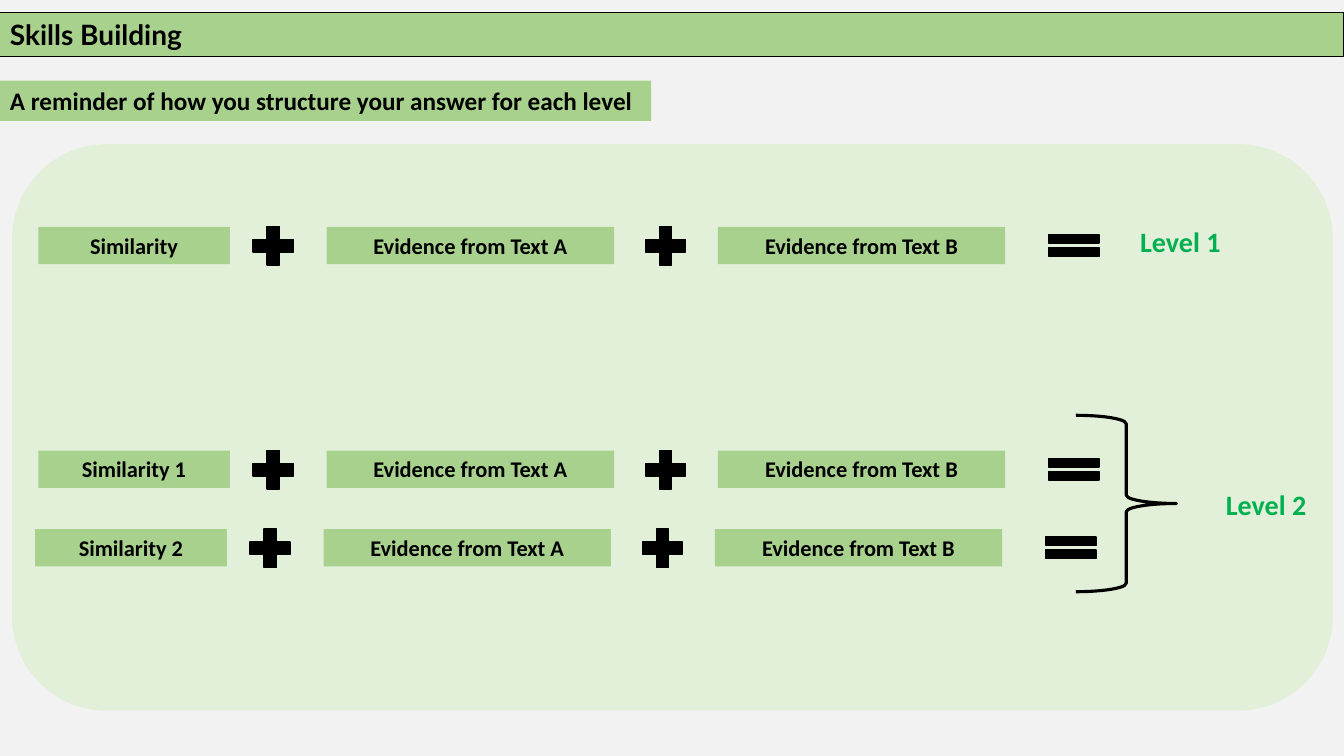
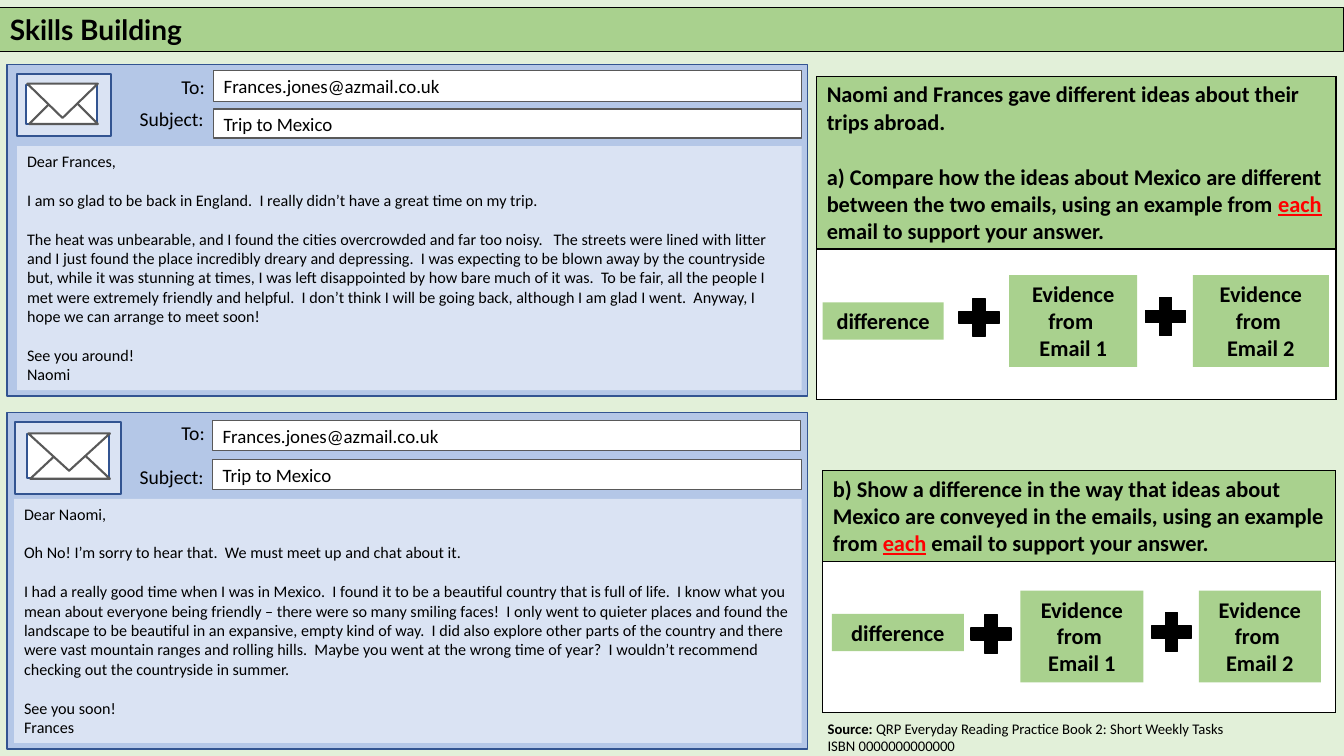
from lxml import etree
from pptx import Presentation
from pptx.dml.color import RGBColor
from pptx.enum.shapes import MSO_SHAPE
from pptx.enum.text import MSO_ANCHOR, PP_ALIGN
from pptx.oxml import parse_xml
from pptx.util import Pt

RECTANGLE = MSO_SHAPE.RECTANGLE
ROUNDED = MSO_SHAPE.ROUNDED_RECTANGLE
TRIANGLE = MSO_SHAPE.ISOSCELES_TRIANGLE
PLUS = MSO_SHAPE.MATH_PLUS
EQUAL = MSO_SHAPE.MATH_EQUAL
BRACE = MSO_SHAPE.RIGHT_BRACE
LEFT, CENTER, RIGHT = PP_ALIGN.LEFT, PP_ALIGN.CENTER, PP_ALIGN.RIGHT
TOP, MIDDLE = MSO_ANCHOR.TOP, MSO_ANCHOR.MIDDLE

PX = 9144  # 100 px to the inch
COLORS = {
    "black": "000000",
    "white": "FFFFFF",
    "gray_page": "F2F2F2",
    "green_page": "E2F0D9",
    "green": "A9D18E",
    "level": "00B050",
    "red": "FF0000",
    "blue": "B4C7E7",
    "blue_light": "DAE3F3",
    "blue_line": "325491",
    "gray_line": "595959",
}
DRAWING = "http://schemas.openxmlformats.org/drawingml/2006/main"


def add_box(shapes, kind, bounds, fill=None, line=None, width=1):
    """Add a preset shape, or a text box when kind is None."""
    bounds = [value * PX for value in bounds]
    if kind is None:
        return shapes.add_textbox(*bounds)
    shape = shapes.add_shape(kind, *bounds)
    shape.shadow.inherit = False
    if fill:
        shape.fill.solid()
        shape.fill.fore_color.rgb = RGBColor.from_string(COLORS[fill])
    else:
        shape.fill.background()
    if line:
        shape.line.color.rgb = RGBColor.from_string(COLORS[line])
        shape.line.width = Pt(width)
    else:
        shape.line.fill.background()
    return shape


def write(frame, paragraphs, size, bold=False, color="black", font="Calibri",
          align=LEFT, anchor=TOP, gap=0):
    """Write paragraphs, each a string or a list of (text, changes) runs."""
    frame.word_wrap = True
    frame.vertical_anchor = anchor
    for index, content in enumerate(paragraphs):
        paragraph = frame.add_paragraph() if index else frame.paragraphs[0]
        paragraph.alignment = align
        # The last two lines of a letter (farewell and name) stay together
        if index and not (len(paragraphs) > 2 and index == len(paragraphs) - 1):
            paragraph.space_before = Pt(gap)
        runs = [(content, {})] if isinstance(content, str) else content
        for text, changes in runs:
            for number, part in enumerate(text.split("\n")):
                if number:
                    paragraph.add_line_break()
                run = paragraph.add_run()
                run.text = part
                run.font.name = font
                run.font.size = Pt(size)
                run.font.bold = changes.get("bold", bold)
                run.font.underline = changes.get("underline", False)
                run.font.color.rgb = RGBColor.from_string(
                    COLORS[changes.get("color", color)])


presentation = Presentation()
presentation.slide_width = 1333 * PX
presentation.slide_height = 750 * PX

# Pages with their title bands
slides = []
for page_color, band_top in (("gray_page", 12), ("green_page", 7)):
    slide = presentation.slides.add_slide(presentation.slide_layouts[6])
    slide.background.fill.solid()
    slide.background.fill.fore_color.rgb = RGBColor.from_string(COLORS[page_color])
    if not slides:
        add_box(slide.shapes, ROUNDED, (12, 143, 1310, 562), "green_page")
    band = add_box(slide.shapes, RECTANGLE, (0, band_top, 1333, 44),
                   "green", "black", 0.75)
    write(band.text_frame, ["Skills Building"], 20, True, font="Lato", anchor=MIDDLE)
    slides.append(slide)
levels_slide, emails_slide = slides

# Slide 1: reminder strip
shapes = levels_slide.shapes
strip = add_box(shapes, RECTANGLE, (0, 80, 646, 40), "green")
write(strip.text_frame,
      ["A reminder of how you structure your answer for each level"], 18, True)

# Slide 1: one formula per row
for left, top, first_part in (
    (38, 225, "Similarity"),
    (38, 447, "Similarity 1"),
    (35, 525, "Similarity 2"),
):
    for offset, width, text in (
        (0, 190, first_part),
        (286, 285, "Evidence from Text A"),
        (674, 285, "Evidence from Text B"),
    ):
        part = add_box(shapes, RECTANGLE, (left + offset, top, width, 37), "green")
        write(part.text_frame, [text], 16, True, align=CENTER)
    for offset in (206, 595):
        add_box(shapes, PLUS, (left + offset, top - 7, 54, 52), "black", "black")
    add_box(shapes, EQUAL, (left + 993, top, 68, 37), "black", "black")

# Slide 1: levels reached
add_box(shapes, BRACE, (1067, 412, 100, 175), None, "black", 2.25)
for left, top, text in ((1121, 218, "Level 1"), (1206, 479, "Level 2")):
    label = add_box(shapes, None, (left, top, 110, 44))
    write(label.text_frame, [text], 20, True, "level")

# Slide 2: question tables
shapes = emails_slide.shapes
EACH = ("each", {"color": "red", "underline": True})
ENDING = (" email to support your answer.", {})
for bounds, heights, question in (
    ((810, 76, 515, 320), (171, 149), [
        "Naomi and Frances gave different ideas about their trips abroad.",
        [("a) Compare how the ideas about Mexico are different between the two "
          "emails, using an example from ", {}), EACH, ENDING],
    ]),
    ((816, 467, 509, 240), (90, 150), [
        [("b) Show a difference in the way that ideas about Mexico are conveyed "
          "in the emails, using an example from ", {}), EACH, ENDING],
    ]),
):
    table = shapes.add_table(2, 1, *[value * PX for value in bounds]).table
    table.first_row = False
    table.horz_banding = False
    for row, height, fill in zip(table.rows, heights, ("green", "white")):
        row.height = height * PX
        cell = row.cells[0]
        cell.margin_bottom = 2 * PX
        cell.fill.solid()
        cell.fill.fore_color.rgb = RGBColor.from_string(COLORS[fill])
        properties = cell._tc.get_or_add_tcPr()
        for position, side in enumerate(("lnL", "lnR", "lnT", "lnB")):
            border = parse_xml(f'<a:{side} xmlns:a="{DRAWING}" w="12700"/>')
            solid = etree.SubElement(border, f"{{{DRAWING}}}solidFill")
            etree.SubElement(solid, f"{{{DRAWING}}}srgbClr", val=COLORS["black"])
            properties.insert(position, border)
    write(table.cell(0, 0).text_frame, question, 16, True, gap=19.5)

# Slide 2: answer formulas
for parts, pluses in (
    (((816, 300, 120, 37), (1001, 273, 127, 91), (1183, 273, 135, 91)),
     ((944, 289), (1129, 288))),
    (((825, 609, 131, 37), (1012, 586, 122, 91), (1189, 586, 121, 91)),
     ((956, 603), (1135, 601))),
):
    texts = ("difference", "Evidence from \nEmail 1", "Evidence from \nEmail 2")
    for bounds, text in zip(parts, texts):
        part = add_box(shapes, RECTANGLE, bounds, "green")
        write(part.text_frame, [text], 16, True, align=CENTER)
    for left, top in pluses:
        add_box(shapes, PLUS, (left, top, 54, 52), "black", "black")

# Slide 2: emails
emails = (
    {
        "panel": (7, 64, 794, 329),
        "icon": (17, 73, 93, 62),
        "envelope": (26, 84, 70, 39),
        "flaps": ((29, 89, 68, 34), (27, 83, 70, 34)),
        "labels": (69, 101),
        "fields": ((212, 70, 583, 31), (212, 108, 583, 29)),
        "body": (17, 145, 778, 242),
        "letter": [
            "Dear Frances,",
            "I am so glad to be back in England.  I really didn’t have a great time "
            "on my trip.",
            "The heat was unbearable, and I found the cities overcrowded and far too "
            "noisy.   The streets were lined with litter and I just found the place "
            "incredibly dreary and depressing.  I was expecting to be blown away by "
            "the countryside but, while it was stunning at times, I was left "
            "disappointed by how bare much of it was.  To be fair, all the people I "
            "met were extremely friendly and helpful.  I don’t think I will be going "
            "back, although I am glad I went.  Anyway, I hope we can arrange to meet "
            "soon!",
            "See you around!",
            "Naomi",
        ],
    },
    {
        "panel": (7, 409, 794, 334),
        "icon": (15, 419, 105, 71),
        "envelope": (27, 431, 81, 43),
        "flaps": ((30, 438, 79, 37), (28, 430, 81, 37)),
        "labels": (413, 456),
        "fields": ((211, 417, 583, 30), (211, 456, 584, 30)),
        "body": (14, 495, 781, 242),
        "letter": [
            "Dear Naomi,",
            "Oh No! I’m sorry to hear that.  We must meet up and chat about it.",
            "I had a really good time when I was in Mexico.  I found it to be a "
            "beautiful country that is full of life.  I know what you mean about "
            "everyone being friendly – there were so many smiling faces!  I only went "
            "to quieter places and found the landscape to be beautiful in an "
            "expansive, empty kind of way.  I did also explore other parts of the "
            "country and there were vast mountain ranges and rolling hills.  Maybe "
            "you went at the wrong time of year?  I wouldn’t recommend checking out "
            "the countryside in summer.",
            "See you soon!",
            "Frances",
        ],
    },
)
for email in emails:
    group = shapes.add_group_shape().shapes
    add_box(group, RECTANGLE, email["panel"], "blue", "blue_line")
    # Envelope icon
    add_box(group, RECTANGLE, email["icon"], "blue_light", "blue_line", 1.5)
    add_box(group, RECTANGLE, email["envelope"], "white", "blue_line", 1.5)
    for bounds, rotation in zip(email["flaps"], (0, 180)):
        flap = add_box(group, TRIANGLE, bounds, "white", "gray_line", 1.5)
        flap.rotation = rotation
    # Address and subject
    for top, left, width, text in zip(email["labels"], (132, 120), (81, 92),
                                      ("To:", "Subject:")):
        label = add_box(group, None, (left, top, width, 34))
        write(label.text_frame, [text], 14, align=RIGHT)
    for bounds, text in zip(email["fields"],
                            ("Frances.jones@azmail.co.uk", "Trip to Mexico")):
        field = add_box(group, RECTANGLE, bounds, "white", "gray_line")
        write(field.text_frame, [text], 13.5, anchor=MIDDLE)
    # Letter
    body = add_box(group, RECTANGLE, email["body"], "blue_light")
    write(body.text_frame, email["letter"], 11.5, gap=14)

# Slide 2: source note
note = add_box(shapes, None, (811, 709, 512, 45))
write(note.text_frame, [[
    ("Source: ", {"bold": True}),
    ("QRP Everyday Reading Practice Book 2: Short Weekly Tasks \n"
     "ISBN 0000000000000", {}),
]], 10.5)

presentation.save("out.pptx")
